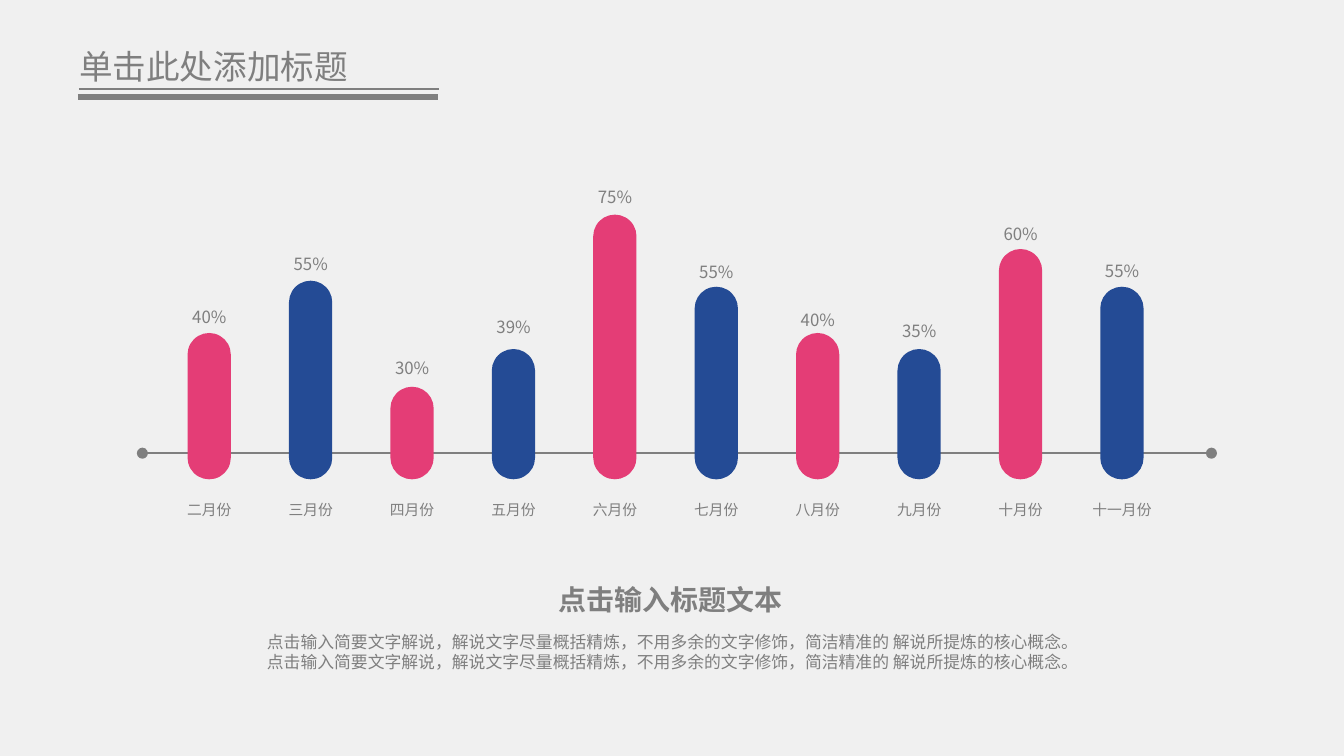
from lxml import etree
from pptx import Presentation
from pptx.dml.color import RGBColor
from pptx.enum.shapes import MSO_CONNECTOR, MSO_SHAPE
from pptx.enum.text import MSO_AUTO_SIZE, PP_ALIGN
from pptx.oxml.ns import qn
from pptx.util import Pt

STRAIGHT = MSO_CONNECTOR.STRAIGHT
ROUNDED = MSO_SHAPE.ROUNDED_RECTANGLE
GROW = MSO_AUTO_SIZE.SHAPE_TO_FIT_TEXT
LEFT, CENTER = PP_ALIGN.LEFT, PP_ALIGN.CENTER
FONT = "Noto Sans CJK SC"
COLORS = {"background": "F0F0F0", "gray": "7F7F7F", "pink": "E43D76", "blue": "244B95"}

deck = Presentation()
deck.slide_width, deck.slide_height = Pt(720), Pt(405)
slide = deck.slides.add_slide(deck.slide_layouts[6])
slide.background.fill.solid()
slide.background.fill.fore_color.rgb = RGBColor.from_string(COLORS["background"])


def add_text(words, left, top, width, height, size, align=CENTER, bold=False, inset=True, wrap=True):
    box = slide.shapes.add_textbox(Pt(left), Pt(top), Pt(width), Pt(height))
    frame = box.text_frame
    frame.word_wrap = wrap
    frame.auto_size = GROW
    if not inset:
        frame.margin_left = frame.margin_right = frame.margin_top = frame.margin_bottom = 0
    paragraph = frame.paragraphs[0]
    paragraph.text = words
    paragraph.alignment = align
    font = paragraph.font
    font.size, font.bold, font.name = Pt(size), bold, FONT
    font.color.rgb = RGBColor.from_string(COLORS["gray"])
    defaults = paragraph._p.pPr.find(qn("a:defRPr"))
    etree.SubElement(defaults, qn("a:ea")).set("typeface", FONT)


def add_rule(left, right, y, weight):
    rule = slide.shapes.add_connector(STRAIGHT, Pt(left), Pt(y), Pt(right), Pt(y))
    rule.line.color.rgb = RGBColor.from_string(COLORS["gray"])
    rule.line.width = Pt(weight)
    etree.SubElement(rule._element.spPr, qn("a:effectLst"))
    return rule


axis = add_rule(76.3, 649, 242.8, 0.75)
for end in ("a:headEnd", "a:tailEnd"):
    etree.SubElement(axis.line._get_or_add_ln(), qn(end)).set("type", "oval")

months = [
    ("二月份", "40%", 178.4, 160.6),
    ("三月份", "55%", 150.4, 132.3),
    ("四月份", "30%", 207.2, 188),
    ("五月份", "39%", 187, 166.1),
    ("六月份", "75%", 115, 96.6),
    ("七月份", "55%", 153.6, 136.6),
    ("八月份", "40%", 178.4, 162.2),
    ("九月份", "35%", 187, 168.3),
    ("十月份", "60%", 133.4, 116.1),
    ("十一月份", "55%", 153.6, 136.2),
]
FIRST_CENTER, PITCH = 112.1, 54.33
BAR_WIDTH, BAR_BOTTOM, LABEL_WIDTH = 23.2, 256.8, 57

for index, (month, share, bar_top, share_top) in enumerate(months):
    center = FIRST_CENTER + index * PITCH
    bar = slide.shapes.add_shape(
        ROUNDED, Pt(center - BAR_WIDTH / 2), Pt(bar_top), Pt(BAR_WIDTH), Pt(BAR_BOTTOM - bar_top))
    bar.adjustments[0] = 0.5
    bar.shadow.inherit = False
    bar.fill.solid()
    bar.fill.fore_color.rgb = RGBColor.from_string(COLORS["blue" if index % 2 else "pink"])
    bar.line.fill.background()
    label_left = center - LABEL_WIDTH / 2
    add_text(month, label_left, 264.8, LABEL_WIDTH, 16.6, 7.9)
    add_text(share, label_left, share_top, LABEL_WIDTH, 18, 9)

explanation = "点击输入简要文字解说，解说文字尽量概括精炼，不用多余的文字修饰，简洁精准的 解说所提炼的核心概念。"
add_text(explanation * 2, 139.7, 338.2, 440.6, 21.6, 9, inset=False)
add_text("点击输入标题文本", 299.2, 312.3, 122, 18, 15, align=LEFT, bold=True, inset=False)

add_text("单击此处添加标题", 35.3, 20.9, 160, 28.8, 18, align=LEFT, wrap=False)
add_rule(42.3, 235, 47.6, 0.75)
add_rule(41.8, 234.4, 52, 3)

deck.save("out.pptx")
